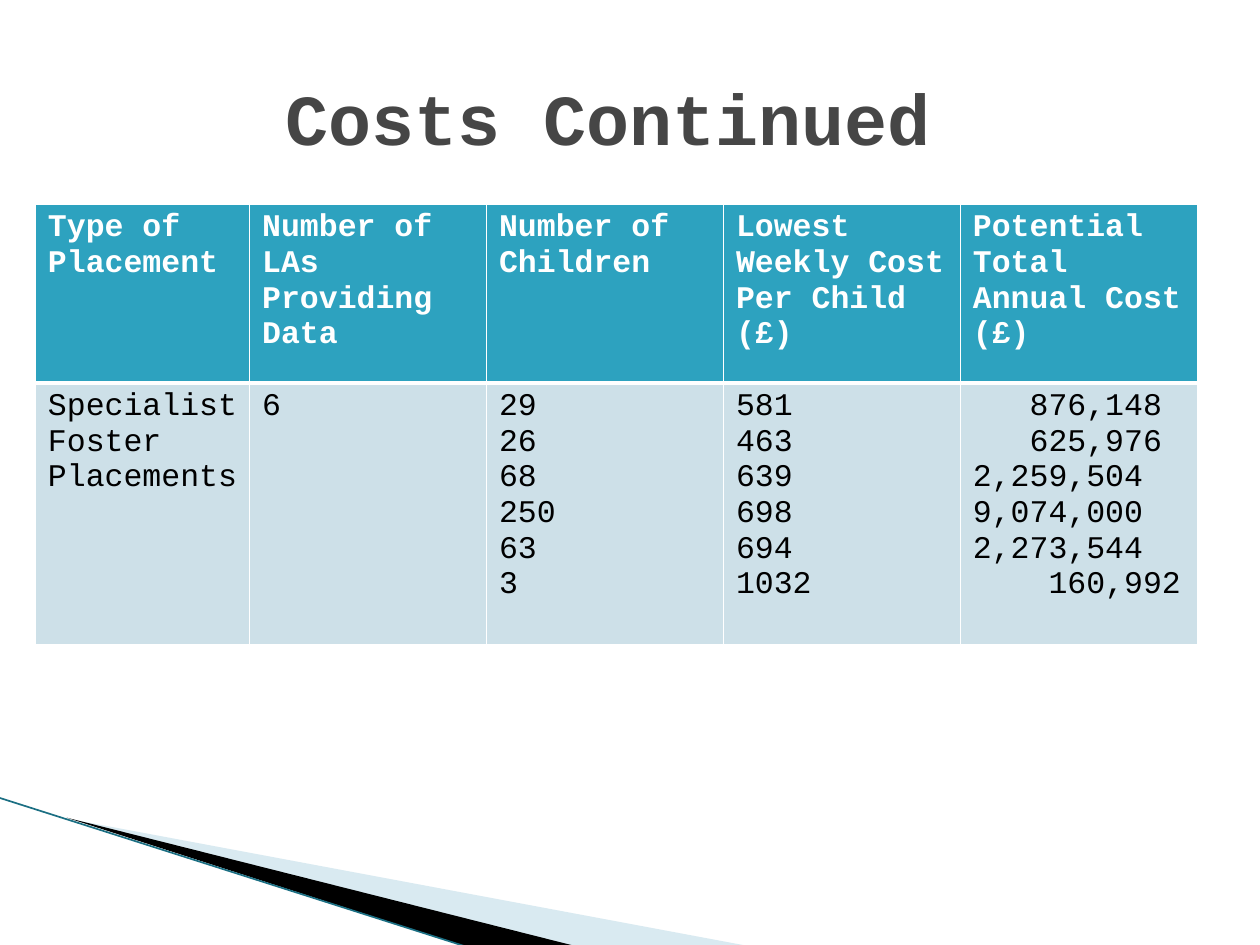
from lxml import etree
from pptx import Presentation
from pptx import util as u
from pptx.dml.color import RGBColor
from pptx.enum import shapes, text
from pptx.oxml import ns

WHITE = RGBColor(0xFF, 0xFF, 0xFF)
BLACK = RGBColor(0, 0, 0)
TITLE_GREY = RGBColor(0x46, 0x46, 0x46)
HEADER_TEAL = RGBColor(0x2D, 0xA2, 0xBF)
BODY_BLUE = RGBColor(0xCD, 0xE0, 0xE8)
WEDGE_BLUE = RGBColor(0xA0, 0xCB, 0xDC)
EDGE_TEAL = RGBColor(0x1B, 0x6F, 0x83)

FONT = "Courier New"
CHAR_WIDTH = 10.8
HEADERS = ["Type of Placement", "Number of LAs Providing Data", "Number of Children",
           "Lowest Weekly Cost Per Child (£)", "Potential Total Annual Cost (£)"]
PLACEMENTS = [
    ["Specialist Foster Placements"],
    ["6"],
    ["29", "26", "68", "250", "63", "3"],
    ["581", "463", "639", "698", "694", "1032"],
    ["876,148", "625,976", "2,259,504", "9,074,000", "2,273,544", "160,992"],
]
COST_INDENTS = [3, 3, 0, 0, 0, 4]
COLUMN_WIDTHS = [122.4] + [135.4] * 4
ROW_HEIGHTS = [102.2, 149.8]


def write(frame, lines, size=18, color=BLACK, bold=False, align=None, indents=()):
    """Fill a text frame with one paragraph per line, indented by whole characters."""
    for index, line in enumerate(lines):
        paragraph = frame.paragraphs[0] if index == 0 else frame.add_paragraph()
        if index < len(indents) and indents[index]:
            margin = u.Pt(indents[index] * CHAR_WIDTH)
            paragraph._p.get_or_add_pPr().set("marL", str(margin))
        if align is not None:
            paragraph.alignment = align
        run = paragraph.add_run()
        run.text = line
        run.font.name = FONT
        run.font.size = u.Pt(size)
        run.font.bold = bold
        run.font.color.rgb = color


def add_wedge(slide, corners, color, opacity=None):
    """Draw a borderless polygon through corners given in points."""
    start, *rest = [(u.Pt(x), u.Pt(y)) for x, y in corners]
    builder = slide.shapes.build_freeform(*start)
    builder.add_line_segments(rest, close=True)
    wedge = builder.convert_to_shape()
    wedge.shadow.inherit = False
    wedge.line.fill.background()
    wedge.fill.solid()
    wedge.fill.fore_color.rgb = color
    if opacity is not None:
        tint = wedge._element.spPr.find(".//" + ns.qn("a:srgbClr"))
        etree.SubElement(tint, ns.qn("a:alpha")).set("val", str(opacity * 1000))


def add_edge(slide, start, end, color, width):
    """Draw a straight line without shadow."""
    edge = slide.shapes.add_connector(
        shapes.MSO_CONNECTOR.STRAIGHT, *[u.Pt(value) for value in (*start, *end)])
    edge.line.color.rgb = color
    edge.line.width = u.Pt(width)
    etree.SubElement(edge._element.spPr, ns.qn("a:effectLst"))


def style_cell(cell, fill, top, bottom):
    """Give a cell white borders and a plain fill."""
    properties = cell._tc.get_or_add_tcPr()
    for side, width in (("L", 1), ("R", 1), ("T", top), ("B", bottom)):
        border = etree.SubElement(properties, ns.qn("a:ln" + side), w=str(u.Pt(width)))
        paint = etree.SubElement(border, ns.qn("a:solidFill"))
        etree.SubElement(paint, ns.qn("a:srgbClr"), val=str(WHITE))
    cell.fill.solid()
    cell.fill.fore_color.rgb = fill


def add_cost_table(slide):
    """Add the table of placement costs."""
    costs = slide.shapes.add_table(
        2, len(HEADERS), u.Pt(20.2), u.Pt(116.6),
        u.Pt(sum(COLUMN_WIDTHS)), u.Pt(sum(ROW_HEIGHTS))).table
    for row, height in zip(costs.rows, ROW_HEIGHTS):
        row.height = u.Pt(height)
    for index, width in enumerate(COLUMN_WIDTHS):
        costs.columns[index].width = u.Pt(width)
        header, body = costs.cell(0, index), costs.cell(1, index)
        style_cell(header, HEADER_TEAL, top=1, bottom=3)
        style_cell(body, BODY_BLUE, top=3, bottom=1)
        write(header.text_frame, [HEADERS[index]], color=WHITE, bold=True)
        is_total = index == len(HEADERS) - 1
        write(body.text_frame, PLACEMENTS[index], indents=COST_INDENTS if is_total else ())


def add_title(slide, heading):
    """Add the heading, centred one half character left of the middle."""
    frame = slide.shapes.add_textbox(u.Pt(36), u.Pt(21.6), u.Pt(648), u.Pt(90)).text_frame
    frame.word_wrap = True
    frame.vertical_anchor = text.MSO_ANCHOR.MIDDLE
    frame.margin_right = u.Pt(31.8)
    write(frame, [heading], size=41, color=TITLE_GREY, bold=True, align=text.PP_ALIGN.CENTER)


def main():
    """Build and save the slide."""
    deck = Presentation()
    deck.slide_width, deck.slide_height = u.Pt(720), u.Pt(540)
    slide = deck.slides.add_slide(deck.slide_layouts[6])
    add_wedge(slide, [(39.6, 468), (428.4, 540.7), (328.3, 540.7)], WEDGE_BLUE, opacity=40)
    add_wedge(slide, [(38.2, 467.3), (329, 540.7), (267.8, 541.4)], BLACK)
    add_edge(slide, (-0.7, 455.8), (267.8, 541.4), EDGE_TEAL, 0.95)
    add_cost_table(slide)
    add_title(slide, "Costs Continued")
    deck.save("out.pptx")


if __name__ == "__main__":
    main()
